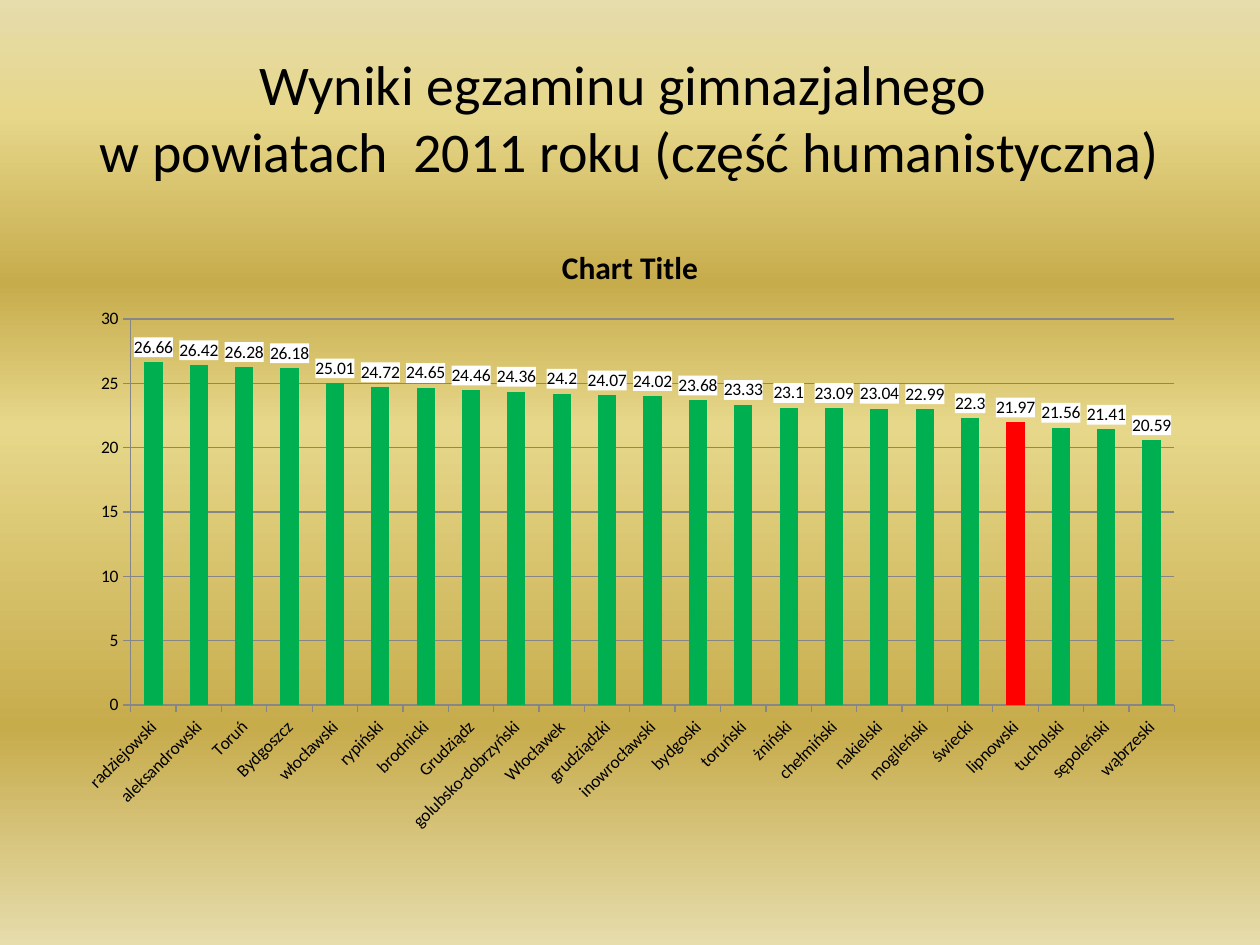
from typing import NamedTuple

from lxml.etree import SubElement
from pptx import Presentation
from pptx.chart.data import CategoryChartData
from pptx.dml.color import RGBColor
from pptx.enum.chart import XL_CHART_TYPE, XL_LABEL_POSITION, XL_TICK_MARK
from pptx.enum.text import MSO_ANCHOR, PP_ALIGN
from pptx.oxml import parse_xml
from pptx.oxml.ns import nsdecls, qn
from pptx.util import Pt

FONT = "Calibri"
COLORS = {
    "text": "000000",
    "bar": "00B050",
    "highlight": "FF0000",
    "line": "868686",
    "label": "FFFFFF",
    "pale": "E6DCAC",
    "light": "E6D78A",
    "dark": "C7AC4C",
}
GRADIENT = [(0, "pale"), (12, "light"), (30, "dark"),
            (45, "light"), (77, "dark"), (100, "pale")]
HIGHLIGHTED = "lipnowski"


class County(NamedTuple):
    name: str
    score: float


COUNTIES = [
    County("radziejowski", 26.66), County("aleksandrowski", 26.42),
    County("Toruń", 26.28), County("Bydgoszcz", 26.18),
    County("włocławski", 25.01), County("rypiński", 24.72),
    County("brodnicki", 24.65), County("Grudziądz", 24.46),
    County("golubsko-dobrzyński", 24.36), County("Włocławek", 24.2),
    County("grudziądzki", 24.07), County("inowrocławski", 24.02),
    County("bydgoski", 23.68), County("toruński", 23.33),
    County("żniński", 23.1), County("chełmiński", 23.09),
    County("nakielski", 23.04), County("mogileński", 22.99),
    County("świecki", 22.3), County("lipnowski", 21.97),
    County("tucholski", 21.56), County("sępoleński", 21.41),
    County("wąbrzeski", 20.59),
]


def rgb(name: str) -> RGBColor:
    return RGBColor.from_string(COLORS[name])


def format_font(font, size: float, bold: bool = False) -> None:
    font.name, font.size, font.bold = FONT, Pt(size), bold
    font.color.rgb = rgb("text")


def set_text(tf, text: str, *, size: float, bold: bool = False) -> None:
    """Fill a text frame with one centred paragraph; \\v breaks a line."""
    p = tf.paragraphs[0]
    p.text = text
    p.alignment = PP_ALIGN.CENTER
    for r in p.runs:
        format_font(r.font, size, bold)


def set_background(s) -> None:
    fill = s.background.fill
    fill.gradient()
    grad = s.background._cSld.find(".//" + qn("a:gradFill"))
    stops = grad.find(qn("a:gsLst"))
    for stop in list(stops):
        stops.remove(stop)
    for percent, color in GRADIENT:
        stop = SubElement(stops, qn("a:gs"), pos=str(percent * 1000))
        SubElement(stop, qn("a:srgbClr"), val=COLORS[color])
    grad.find(qn("a:lin")).set("ang", "5400000")


def style_axis(axis) -> None:
    axis.major_tick_mark = XL_TICK_MARK.OUTSIDE
    axis.minor_tick_mark = XL_TICK_MARK.NONE
    format_font(axis.tick_labels.font, 10)
    style_line(axis.format.line)


def style_line(line) -> None:
    line.color.rgb = rgb("line")
    line.width = Pt(0.75)


def add_labels(plot) -> None:
    plot.has_data_labels = True
    labels = plot.data_labels
    labels.show_value = True
    labels.position = XL_LABEL_POSITION.OUTSIDE_END
    format_font(labels.font, 10)
    box = parse_xml(
        f'<c:spPr {nsdecls("c", "a")}><a:solidFill>'
        f'<a:srgbClr val="{COLORS["label"]}"/></a:solidFill></c:spPr>')
    labels._element.find(qn("c:txPr")).addprevious(box)


def add_score_chart(s) -> None:
    data = CategoryChartData()
    data.categories = [county.name for county in COUNTIES]
    data.add_series("Series 1", [county.score for county in COUNTIES])
    chart = s.shapes.add_chart(XL_CHART_TYPE.COLUMN_CLUSTERED, Pt(36), Pt(126),
                               Pt(648), Pt(356.4), data).chart
    format_font(chart.font, 10)
    chart.has_legend = False
    chart.has_title = True
    set_text(chart.chart_title.text_frame, "Chart Title", size=18, bold=True)
    chart.chart_title.include_in_layout = False

    for axis in (chart.category_axis, chart.value_axis):
        style_axis(axis)
    names = chart.category_axis._element.find(qn("c:txPr"))
    names.find(qn("a:bodyPr")).set("rot", "-2700000")
    scale = chart.value_axis
    scale.minimum_scale, scale.maximum_scale, scale.major_unit = 0, 30, 5
    scale.has_major_gridlines = True
    style_line(scale.major_gridlines.format.line)

    plot = chart.plots[0]
    plot.gap_width = 150
    plot.vary_by_categories = False
    add_labels(plot)
    series = plot.series[0]
    series.invert_if_negative = False
    series.format.fill.solid()
    series.format.fill.fore_color.rgb = rgb("bar")
    index = [county.name for county in COUNTIES].index(HIGHLIGHTED)
    fill = series.points[index].format.fill
    fill.solid()
    fill.fore_color.rgb = rgb("highlight")


def main() -> None:
    prs = Presentation()
    prs.slide_width, prs.slide_height = Pt(720), Pt(540)
    s = prs.slides.add_slide(prs.slide_layouts[5])
    set_background(s)

    title = s.shapes.title
    title.left, title.top, title.width, title.height = (
        Pt(36), Pt(21.6), Pt(648), Pt(90))
    title.text_frame.vertical_anchor = MSO_ANCHOR.MIDDLE
    set_text(title.text_frame,
             "Wyniki egzaminu gimnazjalnego \v"
             "w powiatach  2011 roku (część humanistyczna)", size=32)

    add_score_chart(s)
    prs.save("out.pptx")


if __name__ == "__main__":
    main()
